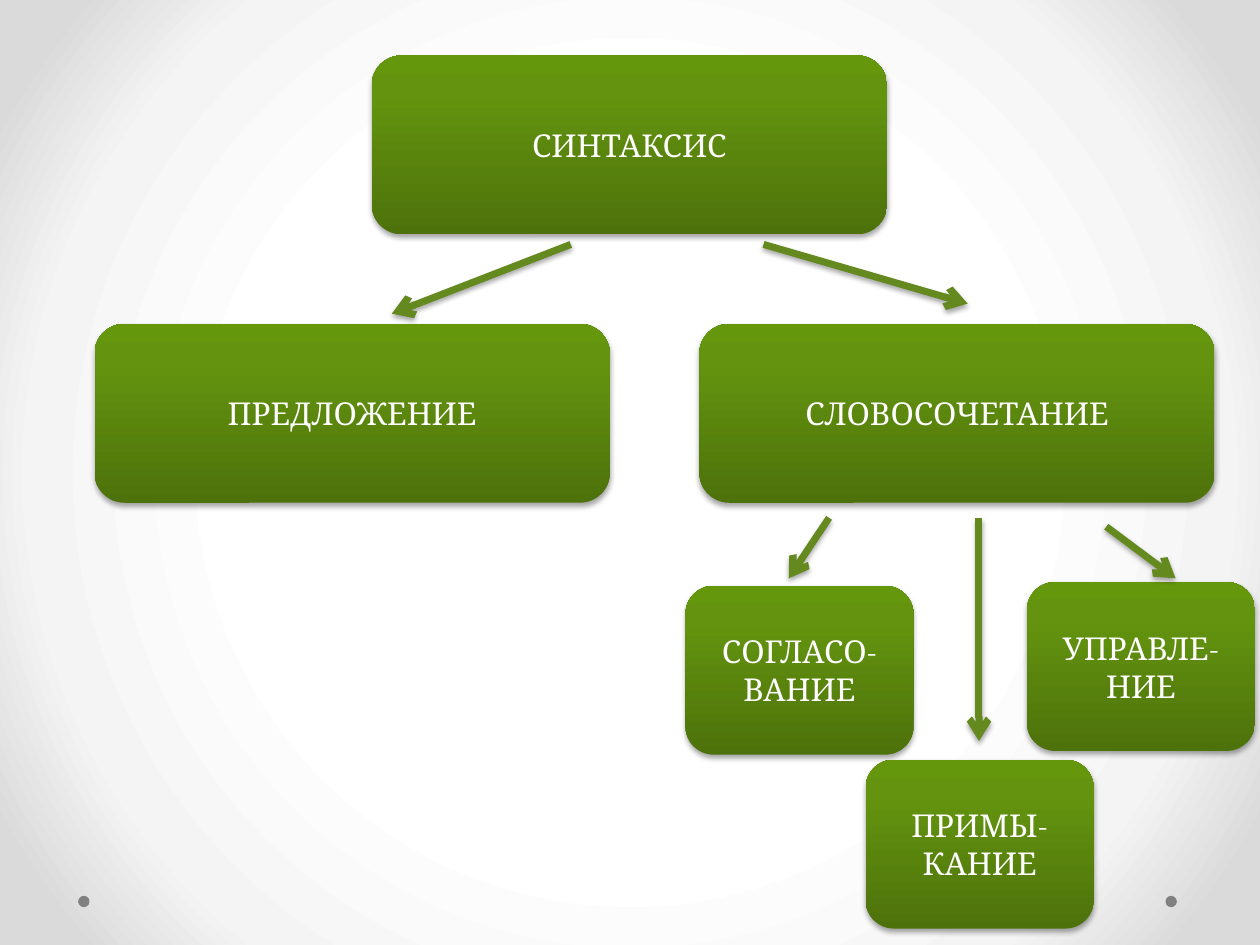
from pptx import Presentation
from pptx.dml.color import RGBColor
from pptx.enum.shapes import MSO_CONNECTOR, MSO_SHAPE
from pptx.enum.text import MSO_ANCHOR, PP_ALIGN
from pptx.oxml import parse_xml
from pptx.oxml.ns import nsdecls
from pptx.util import Inches, Pt

WHITE = RGBColor(0xFF, 0xFF, 0xFF)
BLACK = RGBColor(0, 0, 0)
PALE = RGBColor(0xF4, 0xF4, 0xF4)
SILVER = RGBColor(0xDA, 0xDA, 0xDA)
GRAY = RGBColor(0x80, 0x80, 0x80)
DARK = RGBColor(0x4D, 0x72, 0x0B)
GREEN = RGBColor(0x64, 0x94, 0x0F)
LIGHT = RGBColor(0x65, 0x97, 0x0C)
OLIVE = RGBColor(0x63, 0x89, 0x1F)

BIG = (4.09, 1.42)
SMALL = (1.81, 1.34)
RADIAL = ('<a:path path="circle"><a:fillToRect l="50000" t="50000" '
          'r="50000" b="50000"/></a:path>')
UPWARD = '<a:lin ang="16200000" scaled="0"/>'


def blend(stops, mode):
    marks = "".join(
        f'<a:gs pos="{pos * 1000}"><a:srgbClr val="{color}"/></a:gs>'
        for pos, color in stops)
    return (f'<a:gradFill {nsdecls("a")} rotWithShape="1">'
            f'<a:gsLst>{marks}</a:gsLst>{mode}</a:gradFill>')


def add_shade(shape):
    shape._element.spPr.append(parse_xml(
        f'<a:effectLst {nsdecls("a")}><a:outerShdw blurRad="{Pt(3.1)}" '
        f'dist="{Pt(1.8)}" dir="5400000" rotWithShape="0">'
        f'<a:srgbClr val="{BLACK}"><a:alpha val="35000"/></a:srgbClr>'
        '</a:outerShdw></a:effectLst>'))


def paint_back(slide):
    fill = blend([(50, WHITE), (76, PALE), (92, SILVER)], RADIAL)
    slide._element.cSld.insert(0, parse_xml(
        f'<p:bg {nsdecls("p", "a")}><p:bgPr>{fill}'
        '<a:effectLst/></p:bgPr></p:bg>'))


def add_dot(slide, left):
    dot = slide.shapes.add_shape(
        MSO_SHAPE.OVAL, Inches(left), Inches(7.11), Inches(0.09), Inches(0.09))
    dot.shadow.inherit = False
    dot.fill.solid()
    dot.fill.fore_color.rgb = GRAY
    dot.line.fill.background()


def set_text(shape, text, size=18, font="Cambria", color=WHITE,
             align=PP_ALIGN.CENTER):
    frame = shape.text_frame
    frame.word_wrap = True
    frame.vertical_anchor = MSO_ANCHOR.MIDDLE
    para = frame.paragraphs[0]
    para.alignment = align
    run = para.add_run()
    run.text = text
    run.font.size = Pt(size)
    run.font.name = font
    run.font.color.rgb = color


def add_box(slide, text, left, top, size):
    box = slide.shapes.add_shape(
        MSO_SHAPE.ROUNDED_RECTANGLE, Inches(left), Inches(top),
        *map(Inches, size))
    box._element.spPr.append(parse_xml(
        blend([(0, DARK), (80, GREEN), (100, LIGHT)], UPWARD)))
    box.line.fill.background()
    add_shade(box)
    set_text(box, text)


def add_arrow(slide, *ends):
    arrow = slide.shapes.add_connector(
        MSO_CONNECTOR.STRAIGHT, *map(Inches, ends))
    arrow.line.color.rgb = OLIVE
    arrow.line.width = Pt(4)
    arrow.line._ln.append(
        parse_xml(f'<a:tailEnd {nsdecls("a")} type="arrow"/>'))
    add_shade(arrow)


def main():
    deck = Presentation()
    deck.slide_width, deck.slide_height = Inches(10), Inches(7.5)
    slide = deck.slides.add_slide(deck.slide_layouts[6])
    paint_back(slide)
    for left in (9.25, 0.62):
        add_dot(slide, left)
    for text, left, top, size in (
            ("СИНТАКСИС", 2.95, 0.44, BIG),
            ("ПРЕДЛОЖЕНИЕ", 0.75, 2.57, BIG),
            ("СЛОВОСОЧЕТАНИЕ", 5.55, 2.57, BIG),
            ("СОГЛАСО-ВАНИЕ", 5.44, 4.65, SMALL),
            ("УПРАВЛЕ-НИЕ", 8.15, 4.62, SMALL),
            ("ПРИМЫ-КАНИЕ", 6.87, 6.03, SMALL)):
        add_box(slide, text, left, top, size)
    for ends in (
            (4.53, 1.94, 3.11, 2.49),
            (6.06, 1.94, 7.68, 2.41),
            (6.58, 4.11, 6.26, 4.59),
            (8.78, 4.18, 9.33, 4.59),
            (7.77, 4.11, 7.77, 5.88)):
        add_arrow(slide, *ends)
    deck.save("out.pptx")


if __name__ == "__main__":
    main()
